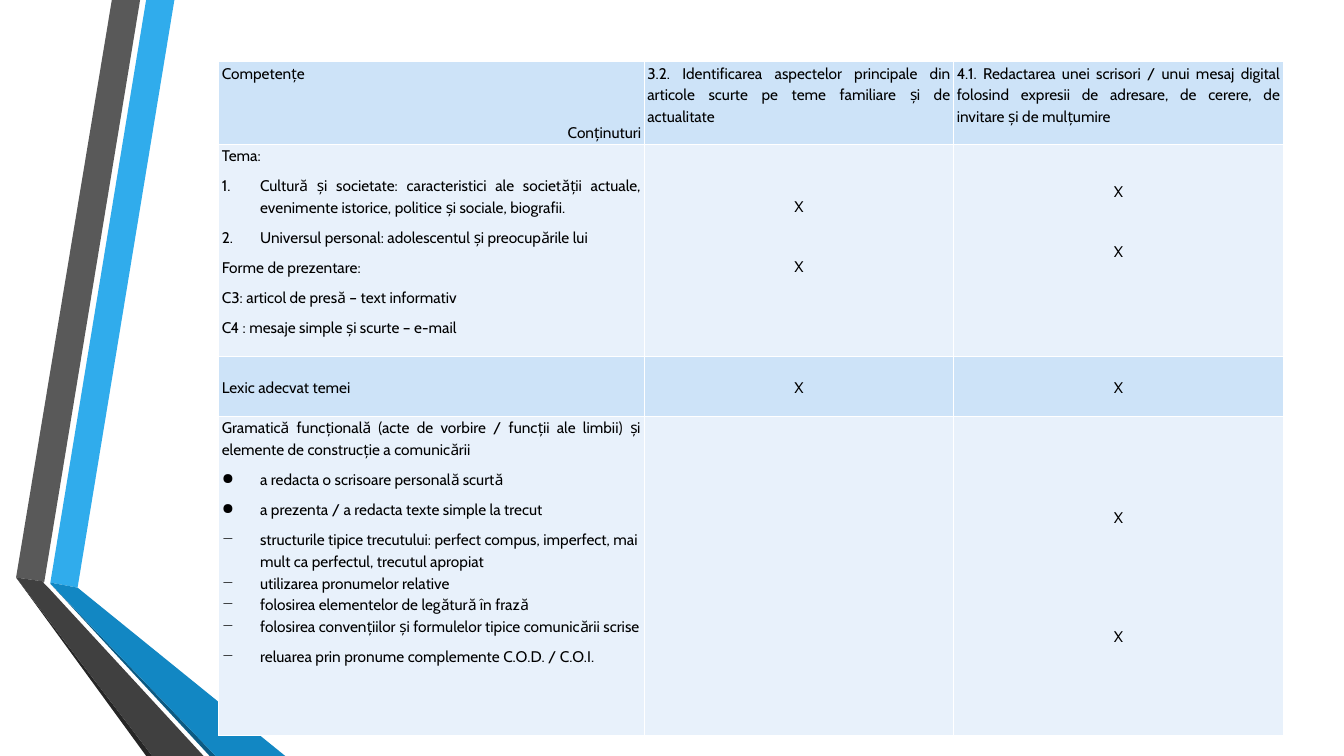
import collections

import lxml.etree
import pptx
import pptx.dml.color
import pptx.enum.text
import pptx.oxml.ns
import pptx.util

SCALE = 9144  # EMU per px, 100 px to the inch
ALIGN = pptx.enum.text.PP_ALIGN
MIDDLE = pptx.enum.text.MSO_ANCHOR.MIDDLE
DARK, LIGHT = "CDE3F8", "E8F1FB"
GAP, WIDE = 27, 70  # space before, in points

Para = collections.namedtuple(
    "Para", "text align before bullet after", defaults=(ALIGN.JUSTIFY, 6, None, 0))

BANDS = [
    ("30ACEC", [(50, 578), (77, 583), (173, 0), (145, 0)]),
    ("595959", [(139, 0), (111, 0), (16, 573), (44, 577)]),
    ("262626", [(16, 573), (145, 750), (151, 750)]),
    ("0C5A82", [(50, 579), (208, 750), (214, 750)]),
    ("1287C3", [(50, 578), (50, 579), (214, 750), (283, 750), (77, 583)]),
    ("404040", [(202, 750), (48, 583), (43, 578), (44, 577), (16, 573), (151, 750)]),
]
COLS = [422, 307, 327]
ROWS = [82, 211, 59, 317]


def px(num):
    return pptx.util.Emu(num * SCALE)


def rgb(code):
    return pptx.dml.color.RGBColor.from_string(code)


def paint(item, code):
    item.fill.solid()
    item.fill.fore_color.rgb = rgb(code)


def add_band(slide, code, dots):
    form = slide.shapes.build_freeform(*dots[0], scale=SCALE)
    form.add_line_segments(dots[1:], close=True)
    band = form.convert_to_shape()
    band.shadow.inherit = False
    band.line.fill.background()
    paint(band, code)


def add_node(parent, tag, **attrs):
    return lxml.etree.SubElement(parent, pptx.oxml.ns.qn(tag), **attrs)


def set_bullet(para, mark):
    """Hang the paragraph behind a mark; "1." stands for automatic numbers."""
    props = para._p.get_or_add_pPr()
    props.set("marL", str(px(38)))
    props.set("indent", str(px(-38)))
    if mark == "1.":
        add_node(props, "a:buAutoNum", type="arabicPeriod")
    else:
        add_node(props, "a:buChar", char=mark)


def set_edges(cell, code):
    props = cell._tc.get_or_add_tcPr()
    for spot, side in enumerate("LRTB"):
        edge = add_node(props, "a:ln" + side, w="12700")
        fill = add_node(edge, "a:solidFill")
        add_node(fill, "a:srgbClr", val=code)
        props.insert(spot, edge)


def fill_cell(cell, paras, code, anchor=None, foot=0):
    """Write the paragraphs; foot is the bottom margin in px."""
    cell.margin_left = cell.margin_right = px(3)
    cell.margin_top, cell.margin_bottom = 0, px(foot)
    if anchor is not None:
        cell.vertical_anchor = anchor
    paint(cell, code)
    set_edges(cell, "FFFFFF")
    frame = cell.text_frame
    frame.text = "\n".join(item.text for item in paras)
    for para, item in zip(frame.paragraphs, paras):
        para.alignment = item.align
        para.line_spacing = 1.15
        para.space_before = pptx.util.Pt(item.before)
        para.space_after = pptx.util.Pt(item.after)
        if item.bullet:
            set_bullet(para, item.bullet)
        for run in para.runs:
            run.font.size = pptx.util.Pt(11)
            run.font.name = "Cabin"
            run.font.color.rgb = rgb("000000")


def add_grid(slide):
    shape = slide.shapes.add_table(
        len(ROWS), len(COLS), px(217), px(61), px(sum(COLS)), px(sum(ROWS)))
    grid = shape.table
    grid.first_row = grid.horz_banding = False
    for col, width in zip(grid.columns, COLS):
        col.width = px(width)
    for row, height in zip(grid.rows, ROWS):
        row.height = px(height)
    return grid


def item(text, mark, before=6, align=ALIGN.LEFT):
    return Para(text, align, before, mark)


def cross(before=6):
    return Para("X", ALIGN.CENTER, before)


def fill_head(grid):
    fill_cell(grid.cell(0, 0), [
        Para("Competențe"), Para("Conținuturi", ALIGN.RIGHT, GAP)], DARK)
    skills = [
        "3.2. Identificarea aspectelor principale din articole scurte "
        "pe teme familiare și de actualitate",
        "4.1. Redactarea unei scrisori / unui mesaj digital folosind expresii "
        "de adresare, de cerere, de invitare și de mulțumire",
    ]
    for col, text in enumerate(skills, 1):
        fill_cell(grid.cell(0, col), [Para(text, after=6)], DARK)


def fill_theme(grid):
    fill_cell(grid.cell(1, 0), [
        Para("Tema:"),
        item("Cultură și societate: caracteristici ale societății actuale, "
             "evenimente istorice, politice și sociale, biografii.",
             "1.", align=ALIGN.JUSTIFY),
        item("Universul personal: adolescentul și preocupările lui",
             "1.", align=ALIGN.JUSTIFY),
        Para("Forme de prezentare:"),
        Para("C3: articol de presă – text informativ"),
        Para("C4\u00a0: mesaje simple și scurte – e-mail".replace("\u00a0", " ")),
    ], LIGHT)
    for col, foot in enumerate([30, 59], 1):
        fill_cell(grid.cell(1, col), [cross(), cross(GAP)], LIGHT, MIDDLE, foot)


def fill_words(grid):
    cells = [Para("Lexic adecvat temei", ALIGN.LEFT), cross(), cross()]
    for col, para in enumerate(cells):
        fill_cell(grid.cell(2, col), [para], DARK, MIDDLE)


def fill_grammar(grid):
    fill_cell(grid.cell(3, 0), [
        Para("Gramatică funcțională (acte de vorbire / funcții ale limbii) "
             "și elemente de construcție a comunicării"),
        item("a redacta o scrisoare personală scurtă", "●"),
        item("a prezenta / a redacta texte simple la trecut", "●"),
        item("structurile tipice trecutului: perfect compus, imperfect, "
             "mai mult ca perfectul, trecutul apropiat", "−"),
        item("utilizarea pronumelor relative", "−", 0),
        item("folosirea elementelor de legătură în frază", "−", 0),
        item("folosirea convențiilor și formulelor tipice comunicării scrise", "−", 0),
        item("reluarea prin pronume complemente C.O.D. / C.O.I.", "−"),
    ], LIGHT)
    fill_cell(grid.cell(3, 1), [], LIGHT)
    fill_cell(grid.cell(3, 2), [cross(), cross(WIDE)], LIGHT, MIDDLE)


def main():
    deck = pptx.Presentation()
    deck.slide_width, deck.slide_height = px(1333), px(750)
    slide = deck.slides.add_slide(deck.slide_layouts[6])
    for code, dots in BANDS:
        add_band(slide, code, dots)
    grid = add_grid(slide)
    fill_head(grid)
    fill_theme(grid)
    fill_words(grid)
    fill_grammar(grid)
    deck.save("out.pptx")


if __name__ == "__main__":
    main()
